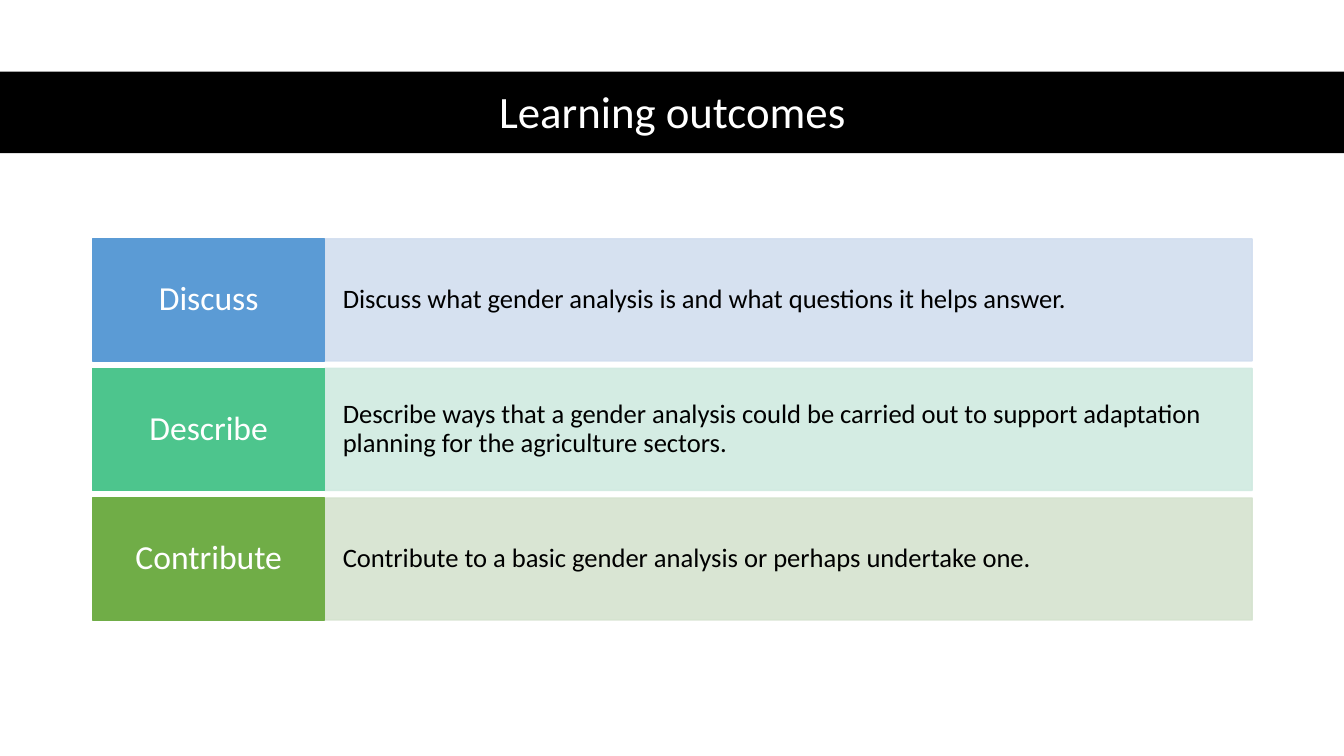
from lxml import etree
from pptx import Presentation
from pptx.dml.color import RGBColor
from pptx.enum.shapes import MSO_SHAPE
from pptx.enum.text import MSO_ANCHOR, PP_ALIGN
from pptx.oxml.ns import qn
from pptx.util import Inches, Pt

RECT = MSO_SHAPE.RECTANGLE
MIDDLE = MSO_ANCHOR.MIDDLE
LEFT, CENTER = PP_ALIGN.LEFT, PP_ALIGN.CENTER

BLACK = RGBColor(0x00, 0x00, 0x00)
WHITE = RGBColor(0xFF, 0xFF, 0xFF)
BLUE = RGBColor(0x5B, 0x9B, 0xD5)
PALE_BLUE = RGBColor(0xD2, 0xDE, 0xEF)
TEAL = RGBColor(0x4D, 0xC5, 0x8D)
PALE_TEAL = RGBColor(0xD0, 0xEA, 0xE1)
GREEN = RGBColor(0x70, 0xAD, 0x47)
PALE_GREEN = RGBColor(0xD5, 0xE3, 0xCF)

FONT = "Calibri"
SLIDE_W, SLIDE_H = 13.33, 7.5
MARGIN, CONTENT_W = 0.92, 11.5
LABEL_W = 2.3
ROWS_TOP, ROWS_BOTTOM, ROW_H = 2.37, 6.15, 1.21

LABEL_FORMAT = {"size": Pt(24), "name": FONT, "color": WHITE}
DETAIL_FORMAT = {"size": Pt(19), "name": FONT, "color": BLACK}
TITLE_FORMAT = {"size": Pt(32), "name": FONT, "color": WHITE}

OUTCOMES = [
    ("Discuss", "Discuss what gender analysis is and what questions it helps answer.",
     BLUE, PALE_BLUE),
    ("Describe", "Describe ways that a gender analysis could be carried out to support "
     "adaptation planning for the agriculture sectors.", TEAL, PALE_TEAL),
    ("Contribute", "Contribute to a basic gender analysis or perhaps undertake one.",
     GREEN, PALE_GREEN),
]


def set_text(sp, text, font_format, align, inset_x, inset_y):
    """Write one vertically centred paragraph into a shape."""
    tf = sp.text_frame
    frame_format = {
        "word_wrap": True, "vertical_anchor": MIDDLE,
        "margin_left": Inches(inset_x), "margin_right": Inches(inset_x),
        "margin_top": Inches(inset_y), "margin_bottom": Inches(inset_y),
    }
    for key, value in frame_format.items():
        setattr(tf, key, value)
    p = tf.paragraphs[0]
    p.alignment = align
    p.line_spacing = 0.9
    r = p.add_run()
    r.text = text
    for key, value in font_format.items():
        if key == "color":
            r.font.color.rgb = value
        else:
            setattr(r.font, key, value)


def add_box(s, x, y, w, h, color, outlined=True, opacity=100):
    """Add a flat rectangle, optionally outlined and translucent."""
    sp = s.shapes.add_shape(RECT, Inches(x), Inches(y), Inches(w), Inches(h))
    sp.shadow.inherit = False
    sp.fill.solid()
    sp.fill.fore_color.rgb = color
    if outlined:
        sp.line.color.rgb = color
        sp.line.width = Pt(1)
    else:
        sp.line.fill.background()
    if opacity < 100:
        for clr in sp._element.spPr.iter(qn("a:srgbClr")):
            etree.SubElement(clr, qn("a:alpha"), val=str(opacity * 1000))
    return sp


def add_title(s, text):
    """Add the full-width title band and its text."""
    add_box(s, 0, 0.71, SLIDE_W, 0.81, BLACK, outlined=False)
    sp = s.shapes.add_textbox(Inches(MARGIN), Inches(0.74), Inches(CONTENT_W), Inches(0.78))
    set_text(sp, text, TITLE_FORMAT, CENTER, 0.1, 0.05)


def add_outcome(s, y, label, detail, color, pale):
    """Add one row: a pale detail box and a strong label box."""
    sp = add_box(s, MARGIN + LABEL_W, y, CONTENT_W - LABEL_W, ROW_H, pale, opacity=90)
    set_text(sp, detail, DETAIL_FORMAT, LEFT, 0.18, 0.31)
    sp = add_box(s, MARGIN, y, LABEL_W, ROW_H, color)
    set_text(sp, label, LABEL_FORMAT, CENTER, 0.12, 0.12)


def main():
    """Build the learning outcomes slide."""
    prs = Presentation()
    prs.slide_width, prs.slide_height = Inches(SLIDE_W), Inches(SLIDE_H)
    s = prs.slides.add_slide(prs.slide_layouts[6])
    add_title(s, "Learning outcomes")
    pitch = (ROWS_BOTTOM - ROWS_TOP - ROW_H) / (len(OUTCOMES) - 1)
    for i, outcome in enumerate(OUTCOMES):
        add_outcome(s, ROWS_TOP + i * pitch, *outcome)
    prs.save("out.pptx")


if __name__ == "__main__":
    main()
